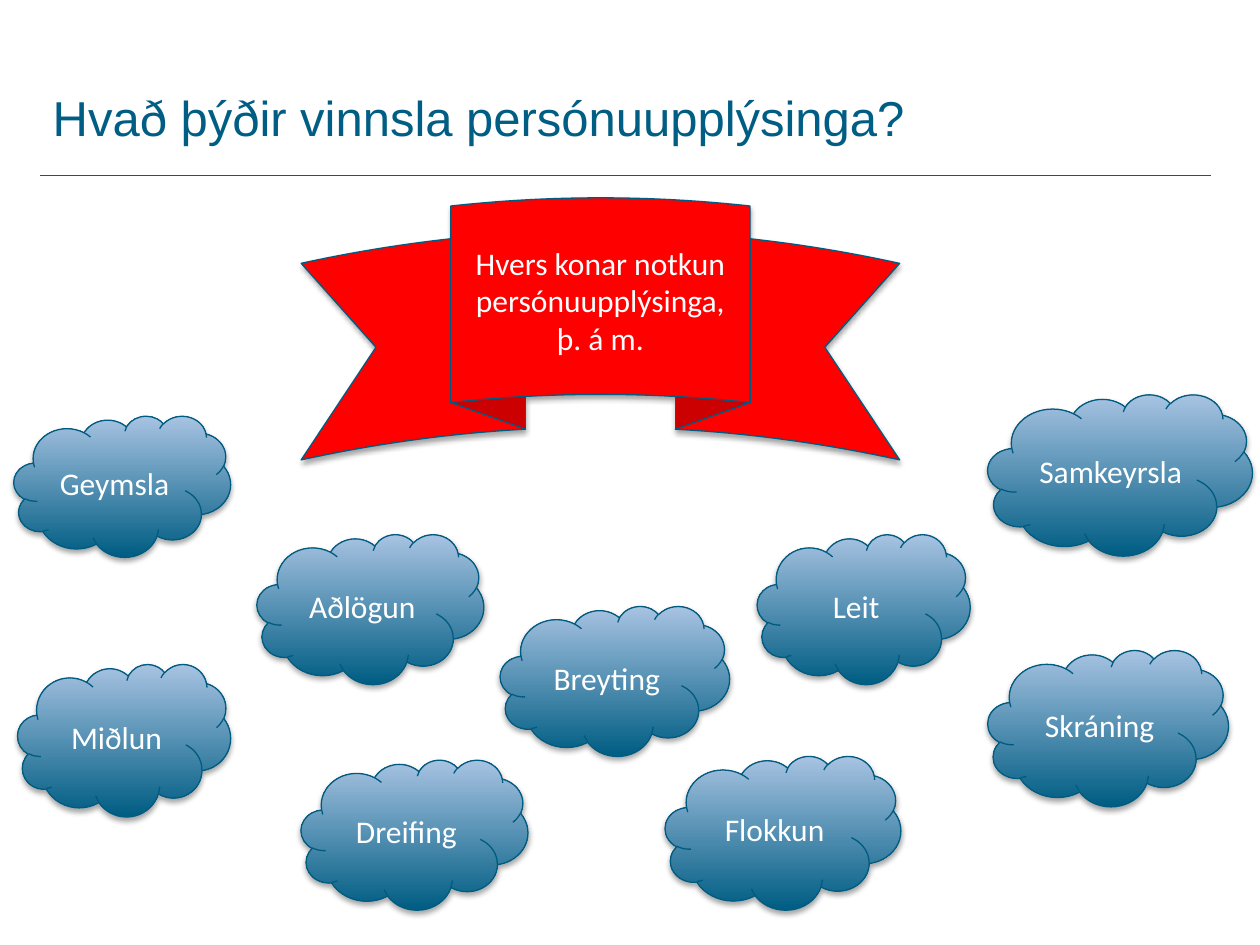
"""Build the slide on what processing of personal data means."""
from lxml import etree
from pptx import Presentation
from pptx.dml.color import RGBColor
from pptx.enum.shapes import MSO_CONNECTOR, MSO_SHAPE
from pptx.enum.text import MSO_ANCHOR, PP_ALIGN
from pptx.oxml import parse_xml
from pptx.oxml.ns import nsdecls, qn
from pptx.util import Inches, Pt

DEEP_BLUE = RGBColor(0x00, 0x5D, 0x83)
OUTLINE_BLUE = RGBColor(0x00, 0x5B, 0x80)
LIGHT_BLUE = RGBColor(0xA8, 0xC3, 0xE2)
RED = RGBColor(0xFF, 0x00, 0x00)
WHITE = RGBColor(0xFF, 0xFF, 0xFF)

SHADOW = (
    f'<a:effectLst {nsdecls("a")}>'
    '<a:outerShdw blurRad="40000" dist="23000" dir="5400000" rotWithShape="0">'
    '<a:srgbClr val="000000"><a:alpha val="35000"/></a:srgbClr>'
    '</a:outerShdw></a:effectLst>'
)


def add_label(preset, text, left, top, width, height):
    label = slide.shapes.add_shape(
        preset, Inches(left), Inches(top), Inches(width), Inches(height))
    label.line.color.rgb = OUTLINE_BLUE
    label.line.width = Pt(0.75)
    label._element.spPr.append(parse_xml(SHADOW))
    frame = label.text_frame
    frame.word_wrap = True
    frame.vertical_anchor = MSO_ANCHOR.MIDDLE
    frame.text = text
    frame.paragraphs[0].alignment = PP_ALIGN.CENTER
    style_text(frame, "Calibri", 18, WHITE)
    return label


def style_text(frame, name, size, color):
    font = frame.paragraphs[0].runs[0].font
    font.name = name
    font.size = Pt(size)
    font.color.rgb = color


prs = Presentation()
prs.slide_width = Inches(10)
prs.slide_height = Inches(7.5)
slide = prs.slides.add_slide(prs.slide_layouts[6])

title_rule = slide.shapes.add_connector(
    MSO_CONNECTOR.STRAIGHT, Inches(0.32), Inches(1.39), Inches(9.61), Inches(1.39))
title_rule.line.color.rgb = DEEP_BLUE
title_rule.line.width = Pt(0.35)
etree.SubElement(title_rule._element.spPr, qn("a:effectLst"))

title = slide.shapes.add_textbox(
    Inches(0.32), Inches(0.61), Inches(9.29), Inches(0.71)).text_frame
title.word_wrap = True
title.vertical_anchor = MSO_ANCHOR.MIDDLE
title.margin_bottom = Inches(0.13)
title.text = "Hvað þýðir vinnsla persónuupplýsinga?"
style_text(title, "Arial", 28, DEEP_BLUE)

operations = [
    ("Geymsla", 0.11, 3.3, 1.72, 1.12),
    ("Leit", 6.01, 4.24, 1.69, 1.19),
    ("Aðlögun", 2.04, 4.24, 1.8, 1.19),
    ("Breyting", 3.97, 4.81, 1.82, 1.19),
    ("Miðlun", 0.14, 5.27, 1.69, 1.21),
    ("Dreifing", 2.39, 6.03, 1.8, 1.19),
    ("Samkeyrsla", 7.84, 3.13, 2.1, 1.28),
    ("Skráning", 7.84, 5.16, 1.91, 1.24),
    ("Flokkun", 5.28, 6, 1.87, 1.22),
]
for operation in operations:
    cloud = add_label(MSO_SHAPE.CLOUD, *operation)
    cloud.fill.gradient()
    cloud.fill.gradient_angle = 90
    for stop, color in zip(cloud.fill.gradient_stops, (DEEP_BLUE, LIGHT_BLUE)):
        stop.color.rgb = color

ribbon = add_label(
    MSO_SHAPE.CURVED_UP_RIBBON, "Hvers konar notkun persónuupplýsinga, þ. á m.",
    2.39, 1.57, 4.75, 2.08)
ribbon.fill.solid()
ribbon.fill.fore_color.rgb = RED

prs.save("out.pptx")
